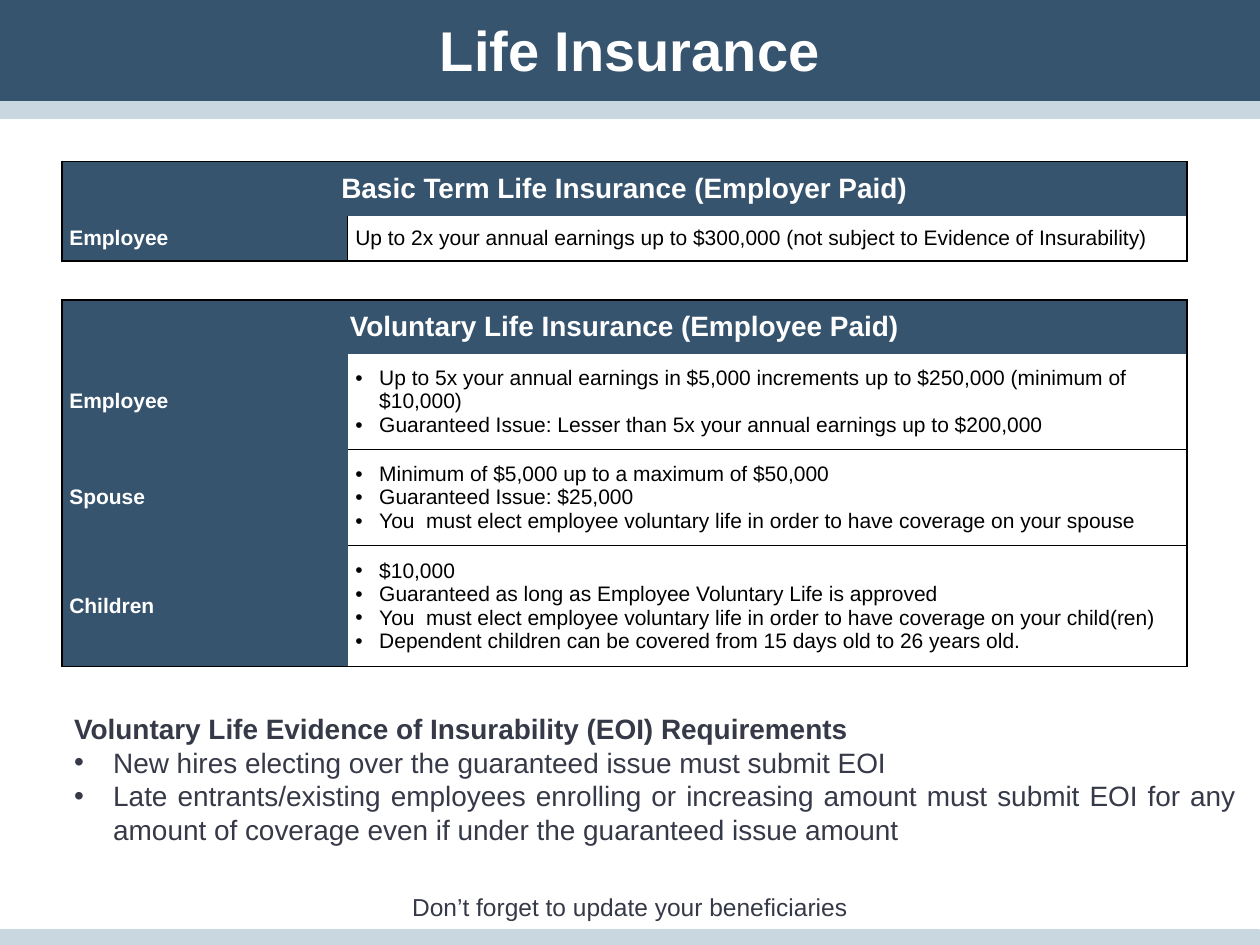
from lxml.etree import SubElement
from pptx import Presentation
from pptx.dml.color import RGBColor as Color
from pptx.enum.shapes import MSO_SHAPE as Shape
from pptx.enum.text import MSO_ANCHOR as Anchor, MSO_AUTO_SIZE as AutoSize, PP_ALIGN as Align
from pptx.oxml.ns import qn
from pptx.util import Inches, Pt

THEME = {
    "font": "Arial",
    "navy": Color.from_string("37546F"),
    "pale": Color.from_string("C9D8E0"),
    "ink": Color.from_string("363947"),
    "black": Color.from_string("000000"),
    "white": Color.from_string("FFFFFF"),
    "title": Pt(32),
    "heading": Pt(16),
    "note": Pt(14),
    "body": Pt(12),
}

presentation = Presentation()
presentation.slide_width, presentation.slide_height = Inches(10), Inches(7.5)
column = presentation.slide_width / 100
row = presentation.slide_height / 100
slide = presentation.slides.add_slide(presentation.slide_layouts[5])


def place(left, top, width, height):
    return [round(share * unit) for share, unit in zip((left, top, width, height), (column, row, column, row))]


def write(frame, lines, size, color, bold=False, align=Align.LEFT, indent=0):
    frame.word_wrap = True
    for index, line in enumerate(lines):
        fresh = index == 0 and not frame.text
        paragraph = frame.paragraphs[0] if fresh else frame.add_paragraph()
        paragraph.alignment = align
        run = paragraph.add_run()
        run.text = line
        for name, value in {"name": THEME["font"], "size": size, "bold": bold}.items():
            setattr(run.font, name, value)
        run.font.color.rgb = color
        if indent:
            properties = paragraph._p.get_or_add_pPr()
            properties.set("marL", str(Inches(indent)))
            properties.set("indent", str(-Inches(indent)))
            SubElement(properties, qn("a:buFont"), typeface=THEME["font"])
            SubElement(properties, qn("a:buChar"), char="•")


for left, top in ((-0.1, 98.4), (0, 10.8)):
    stripe = slide.shapes.add_shape(Shape.RECTANGLE, *place(left, top, 100, 1.73))
    stripe.shadow.inherit = False
    stripe.fill.solid()
    stripe.fill.fore_color.rgb = stripe.line.color.rgb = THEME["pale"]
    stripe.line.width = Pt(1)

reminder = slide.shapes.add_textbox(*place(5.8, 93.73, 88.4, 4.53))
write(reminder.text_frame, ["Don’t forget to update your beneficiaries"],
      THEME["note"], THEME["ink"], align=Align.CENTER)
reminder.text_frame.paragraphs[0].space_before = Pt(2.8)

plans = [
    {
        "heading": "Voluntary Life Insurance (Employee Paid)",
        "top": 31.73,
        "heights": (5.65, 10.15, 10.15, 12.8),
        "indent": 0.19,
        "value_sides": "RTB",
        "rows": [
            ("Employee", [
                "Up to 5x your annual earnings in $5,000 increments up to $250,000 (minimum of $10,000)",
                "Guaranteed Issue: Lesser than 5x your annual earnings up to $200,000",
            ]),
            ("Spouse", [
                "Minimum of $5,000 up to a maximum of $50,000",
                "Guaranteed Issue: $25,000",
                "You  must elect employee voluntary life in order to have coverage on your spouse",
            ]),
            ("Children", [
                "$10,000",
                "Guaranteed as long as Employee Voluntary Life is approved",
                "You  must elect employee voluntary life in order to have coverage on your child(ren)",
                "Dependent children can be covered from 15 days old to 26 years old.",
            ]),
        ],
    },
    {
        "heading": "Basic Term Life Insurance (Employer Paid)",
        "top": 17.07,
        "heights": (5.75, 4.8),
        "indent": 0,
        "value_sides": "LRB",
        "rows": [
            ("Employee", ["Up to 2x your annual earnings up to $300,000 (not subject to Evidence of Insurability)"]),
        ],
    },
]
cell_format = {
    "margin_left": Inches(0.06), "margin_right": Inches(0.06),
    "margin_top": Inches(0.08), "margin_bottom": Inches(0.08),
    "vertical_anchor": Anchor.MIDDLE,
}

for plan in plans:
    count = len(plan["heights"])
    frame = slide.shapes.add_table(count, 2, *place(4.9, plan["top"], 89.3, sum(plan["heights"])))
    table = frame.table
    table.first_row = table.horz_banding = False
    for table_column, width in zip(table.columns, (22.7, 66.6)):
        table_column.width = round(width * column)
    for table_row, height in zip(table.rows, plan["heights"]):
        table_row.height = round(height * row)
    table.cell(0, 0).merge(table.cell(0, 1))

    for row_index in range(count):
        for column_index in range(2):
            cell = table.cell(row_index, column_index)
            is_value = row_index > 0 and column_index == 1
            for name, value in cell_format.items():
                setattr(cell, name, value)
            if row_index == 0:
                sides = "LTR" if column_index == 0 else "TR"
            elif is_value:
                sides = plan["value_sides"]
                if row_index == 1:
                    sides = sides.replace("T", "")
            else:
                sides = "LB" if row_index == count - 1 else "L"
            properties = cell._tc.get_or_add_tcPr()
            for side in "LRTB":
                border = SubElement(properties, qn(f"a:ln{side}"), w=str(Pt(1)))
                if side in sides:
                    solid = SubElement(border, qn("a:solidFill"))
                    SubElement(solid, qn("a:srgbClr"), val=str(THEME["black"]))
                else:
                    SubElement(border, qn("a:noFill"))
            cell.fill.solid()
            cell.fill.fore_color.rgb = THEME["white" if is_value else "navy"]

    write(table.cell(0, 0).text_frame, [plan["heading"]],
          THEME["heading"], THEME["white"], bold=True, align=Align.CENTER)
    for row_index, (label, details) in enumerate(plan["rows"], 1):
        write(table.cell(row_index, 0).text_frame, [label], THEME["body"], THEME["white"], bold=True)
        write(table.cell(row_index, 1).text_frame, details, THEME["body"], THEME["black"], indent=plan["indent"])

requirements = slide.shapes.add_textbox(*place(4.9, 74.67, 94.2, 15.73)).text_frame
requirements.auto_size = AutoSize.SHAPE_TO_FIT_TEXT
write(requirements, ["Voluntary Life Evidence of Insurability (EOI) Requirements"],
      THEME["heading"], THEME["ink"], bold=True, align=Align.JUSTIFY)
write(requirements, [
    "New hires electing over the guaranteed issue must submit EOI",
    "Late entrants/existing employees enrolling or increasing amount must submit EOI for any "
    "amount of coverage even if under the guaranteed issue amount",
], THEME["heading"], THEME["ink"], align=Align.JUSTIFY, indent=0.31)

title = slide.shapes.title
title.left, title.top, title.width, title.height = place(0, -0.27, 100, 10.93)
title.fill.solid()
title.fill.fore_color.rgb = title.line.color.rgb = THEME["navy"]
title.line.width = Pt(1)
title.text_frame.vertical_anchor = Anchor.MIDDLE
write(title.text_frame, ["Life Insurance"], THEME["title"], THEME["white"], bold=True, align=Align.CENTER)

presentation.save("out.pptx")
